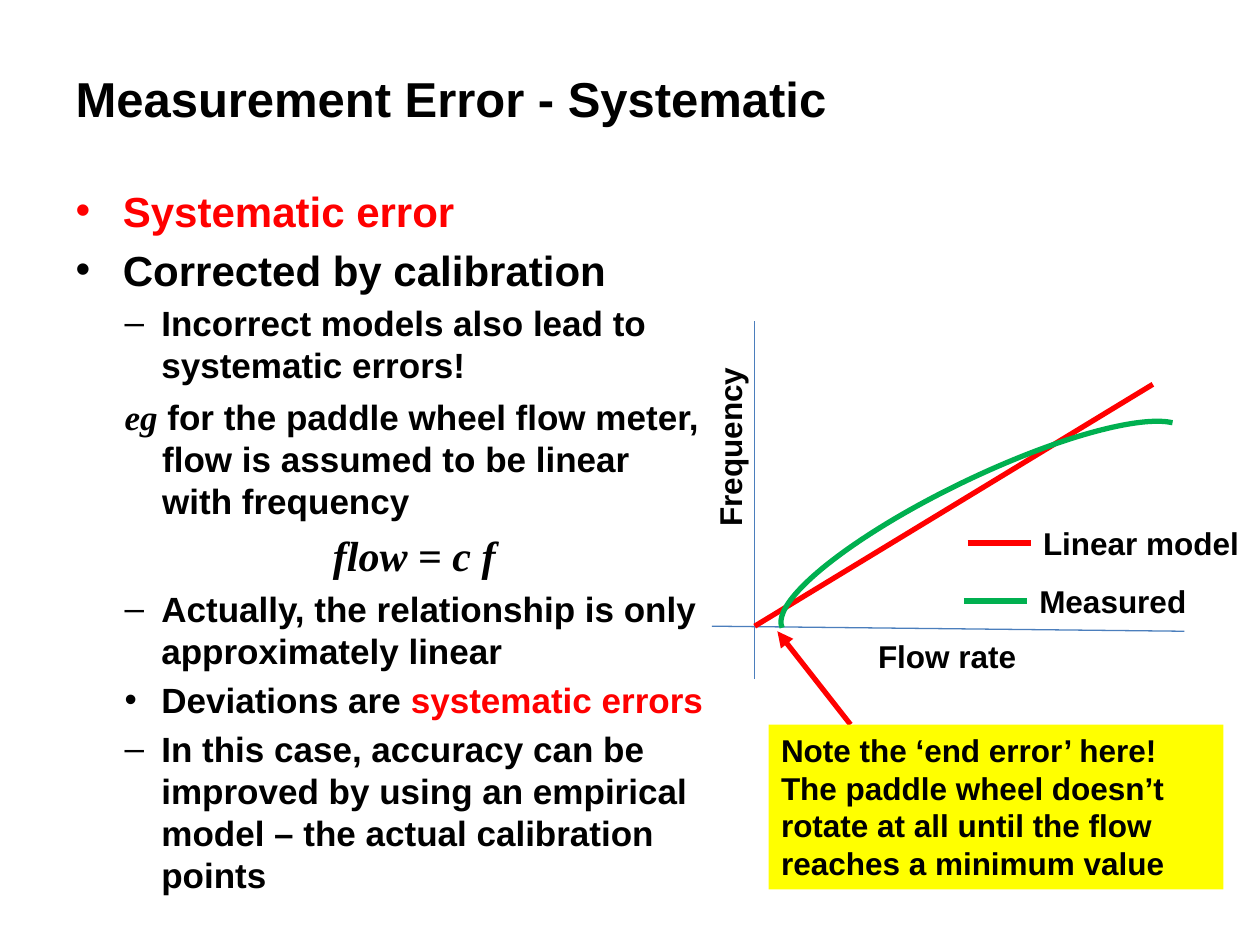
from lxml.etree import SubElement
from pptx import Presentation
from pptx.dml.color import RGBColor
from pptx.enum.shapes import MSO_CONNECTOR, MSO_SHAPE
from pptx.enum.text import MSO_ANCHOR, MSO_AUTO_SIZE, PP_ALIGN
from pptx.oxml.ns import qn
from pptx.util import Pt

BLACK = RGBColor(0x00, 0x00, 0x00)
RED = RGBColor(0xFF, 0x00, 0x00)
GREEN = RGBColor(0x00, 0xB0, 0x50)
BLUE = RGBColor(0x4B, 0x7E, 0xBC)
YELLOW = RGBColor(0xFF, 0xFF, 0x00)
SERIF = "Times New Roman"


def write(p, text, size=18, font="Arial", color=BLACK, italic=False):
    """Add bold text to a paragraph, with a line break at each newline."""
    for i, part in enumerate(text.split("\n")):
        if i:
            p.add_line_break()
        r = p.add_run()
        r.text = part
        r.font.size, r.font.name = Pt(size), font
        r.font.bold, r.font.italic = True, italic
        r.font.color.rgb = color


class Deck:
    """Hold the current slide and draw each kind of element in its style."""

    def __init__(self, s):
        self.s = s

    def place(self, sp, x, y, w, h):
        """Move and size a shape."""
        sp.left, sp.top, sp.width, sp.height = Pt(x), Pt(y), Pt(w), Pt(h)

    def title(self, text, *box):
        """Fill the title placeholder."""
        sp = self.s.shapes.title
        self.place(sp, *box)
        tf = sp.text_frame
        tf.vertical_anchor = MSO_ANCHOR.MIDDLE
        p = tf.paragraphs[0]
        p.alignment = PP_ALIGN.LEFT
        write(p, text, size=28)

    def body(self, items, *box):
        """Fill the body placeholder with (level, bullet, margin, indent, runs) items."""
        sp = self.s.placeholders[1]
        self.place(sp, *box)
        tf = sp.text_frame
        tf.auto_size = MSO_AUTO_SIZE.NONE
        for i, (level, bullet, margin, indent, runs) in enumerate(items):
            p = tf.add_paragraph() if i else tf.paragraphs[0]
            p.level = level
            pPr = p._p.get_or_add_pPr()
            pPr.set("marL", str(Pt(margin)))
            pPr.set("indent", str(Pt(indent)))
            if bullet:
                SubElement(pPr, qn("a:buChar"), char=bullet)
            else:
                SubElement(pPr, qn("a:buNone"))
                if not indent:
                    p.alignment = PP_ALIGN.CENTER
            for text, fmt in runs:
                write(p, text, **fmt)

    def line(self, x1, y1, x2, y2, color, width=3, arrow=False):
        """Draw a straight line, with an optional arrowhead at its start."""
        cn = self.s.shapes.add_connector(
            MSO_CONNECTOR.STRAIGHT, Pt(x1), Pt(y1), Pt(x2), Pt(y2))
        cn.line.color.rgb, cn.line.width = color, Pt(width)
        if arrow:
            SubElement(cn.line._get_or_add_ln(), qn("a:headEnd"), type="triangle")
        SubElement(cn._element.spPr, qn("a:effectLst"))

    def label(self, text, x, y, w, rotation=0):
        """Add a one-line label."""
        sp = self.s.shapes.add_textbox(Pt(x), Pt(y), Pt(w), Pt(28.8))
        sp.rotation = rotation
        tf = sp.text_frame
        tf.word_wrap = False
        tf.auto_size = MSO_AUTO_SIZE.SHAPE_TO_FIT_TEXT
        write(tf.paragraphs[0], text)

    def arc(self, x, y, w, h, rotation, angles, color):
        """Draw a rotated arc."""
        sp = self.s.shapes.add_shape(MSO_SHAPE.ARC, Pt(x), Pt(y), Pt(w), Pt(h))
        sp.shadow.inherit = False
        sp.rotation = rotation
        sp.adjustments[0], sp.adjustments[1] = angles
        sp.fill.background()
        sp.line.color.rgb, sp.line.width = color, Pt(3)

    def note(self, lines, x, y, w, h):
        """Add a filled note with one paragraph for each line."""
        sp = self.s.shapes.add_shape(MSO_SHAPE.RECTANGLE, Pt(x), Pt(y), Pt(w), Pt(h))
        sp.shadow.inherit = False
        sp.fill.solid()
        sp.fill.fore_color.rgb = YELLOW
        sp.line.fill.background()
        tf = sp.text_frame
        tf.word_wrap = True
        tf.auto_size = MSO_AUTO_SIZE.SHAPE_TO_FIT_TEXT
        tf.vertical_anchor = MSO_ANCHOR.TOP
        for i, text in enumerate(lines):
            p = tf.add_paragraph() if i else tf.paragraphs[0]
            p.alignment = PP_ALIGN.LEFT
            write(p, text)


def main():
    """Build and save the slide."""
    prs = Presentation()
    prs.slide_width, prs.slide_height = Pt(720), Pt(540)
    deck = Deck(prs.slides.add_slide(prs.slide_layouts[1]))

    deck.title("Measurement Error - Systematic", 36, 21.6, 648, 68.4)
    top, sub = {"size": 24}, {"size": 20}
    deck.body([
        (0, "•", 27, -27, [("Systematic error", {**top, "color": RED})]),
        (0, "•", 27, -27, [("Corrected by calibration", top)]),
        (1, "–", 49, -21, [("Incorrect models also lead to systematic errors!", sub)]),
        (1, None, 49.5, -21.5, [
            ("eg", {**sub, "font": SERIF, "italic": True}),
            (" for the paddle wheel flow meter, flow is assumed to be linear \nwith frequency", sub)]),
        (1, None, 28, 0, [("flow = c f ", {**top, "font": SERIF, "italic": True})]),
        (1, "–", 49, -21, [("Actually, the relationship is only approximately linear", sub)]),
        (1, "•", 49, -21, [("Deviations are ", sub),
                           ("systematic errors", {**sub, "color": RED})]),
        (1, "–", 49, -21, [("In this case, accuracy can be improved by using an empirical "
                            "model – the actual calibration points", sub)]),
    ], 36, 102.24, 379.44, 401.76)

    deck.line(431.28, 183.6, 431.28, 388.08, BLUE, width=0.75)
    deck.line(406.8, 357.84, 676.8, 360.72, BLUE, width=0.75)
    deck.label("Flow rate", 494.64, 360.72, 94.32)
    deck.label("Frequency", 363.6, 240.48, 106.56, rotation=270)
    deck.line(431.28, 357.84, 658.8, 219.6, RED)
    deck.arc(532.8, 174.24, 59.76, 257.04, 244.2, (162, 51.65), GREEN)

    for text, x, y, w, color in (("Linear model", 552.96, 310.32, 127.44, RED),
                                 ("Measured", 550.8, 343.44, 99.36, GREEN)):
        deck.line(x, y, x + 36, y, color)
        deck.label(text, x + 36, y - 14.4, w)

    deck.line(444.24, 360.72, 486, 414, RED, arrow=True)
    deck.note(["Note the ‘end error’ here!",
               "The paddle wheel doesn’t rotate at all until the flow reaches a minimum value"],
              439.2, 414, 259.92, 94.32)
    prs.save("out.pptx")


if __name__ == "__main__":
    main()
